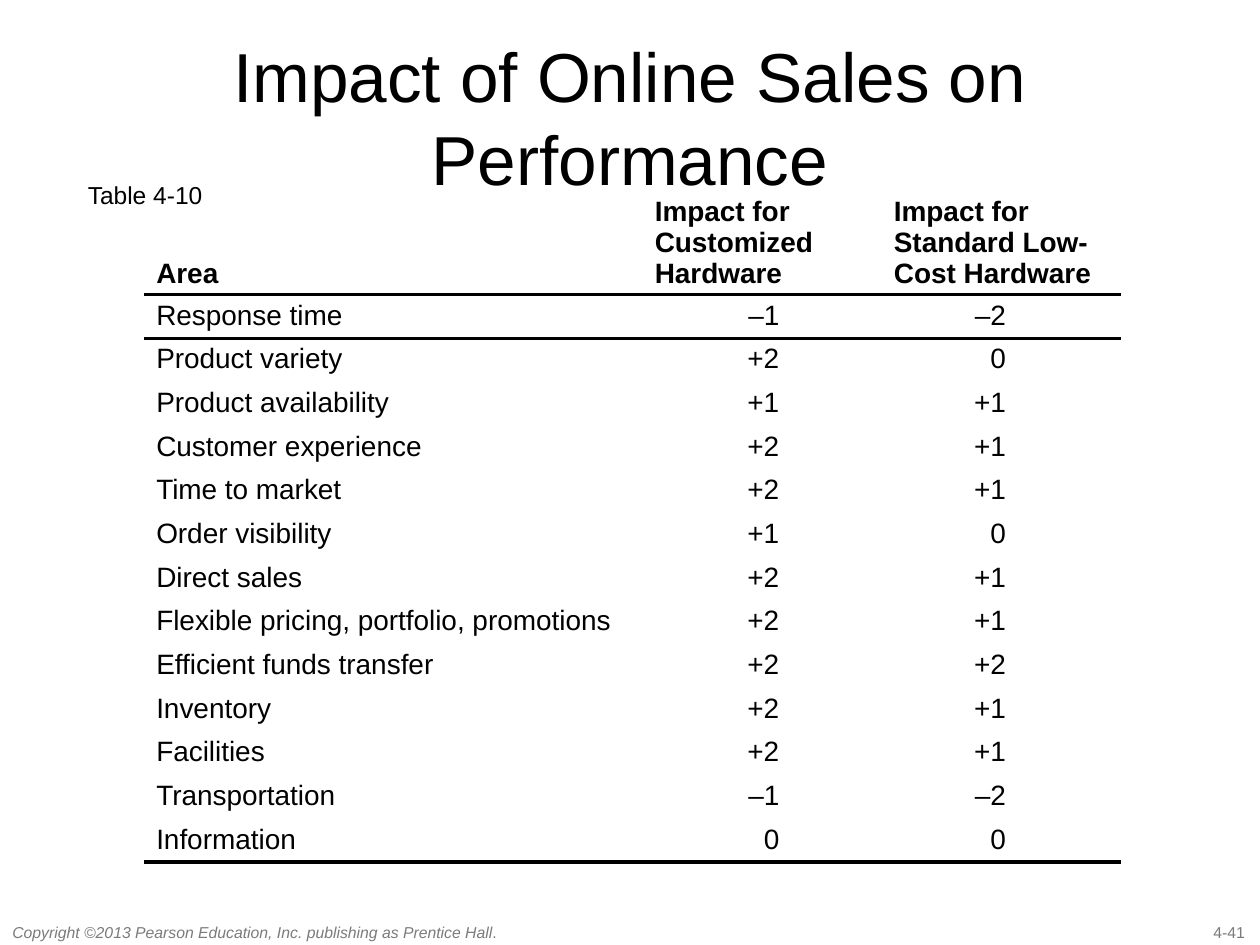
from typing import NamedTuple

from lxml.etree import SubElement
from pptx import Presentation
from pptx.dml.color import RGBColor
from pptx.enum.text import MSO_ANCHOR, MSO_AUTO_SIZE, PP_ALIGN
from pptx.oxml.ns import qn
from pptx.util import Cm, Pt

BLACK = RGBColor(0, 0, 0)
GRAY = RGBColor(0x7B, 0x7B, 0x7B)
WIDTHS = (10.05, 4.82, 4.82)
TABS = (None, 2.51, 2.26)
HEAD_H, ROW_H = 2.14, 0.88
RULED = (0, 1, 13)  # rows with a rule below


class Row(NamedTuple):
    area: str
    custom: str
    standard: str


class Label(NamedTuple):
    left: float
    top: float
    width: float
    height: float
    size: float
    color: RGBColor
    runs: tuple[tuple[str, bool], ...]  # text, italic


HEAD = Row("Area", "Impact for Customized Hardware",
           "Impact for Standard Low-Cost Hardware")
ROWS = (
    Row("Response time", "–1", "–2"),
    Row("Product variety", "+2", "0"),
    Row("Product availability", "+1", "+1"),
    Row("Customer experience", "+2", "+1"),
    Row("Time to market", "+2", "+1"),
    Row("Order visibility", "+1", "0"),
    Row("Direct sales", "+2", "+1"),
    Row("Flexible pricing, portfolio, promotions", "+2", "+1"),
    Row("Efficient funds transfer", "+2", "+2"),
    Row("Inventory", "+2", "+1"),
    Row("Facilities", "+2", "+1"),
    Row("Transportation", "–1", "–2"),
    Row("Information", "0", "0"),
)
LABELS = (
    Label(24.21, 18.47, 1.19, 0.63, 9, GRAY, (("4-41", False),)),
    Label(0, 18.47, 10.4, 0.63, 9, GRAY, (
        ("Copyright ©2013 Pearson Education, Inc. publishing as Prentice Hall", True),
        (".", False))),
    Label(1.52, 3.51, 2.84, 0.86, 14, BLACK, (("Table 4-10", False),)),
)


def style(font, color: RGBColor, **extra) -> None:
    for key, value in {"name": "Arial", **extra}.items():
        setattr(font, key, value)
    font.color.rgb = color


def add_title(slide) -> None:
    title = slide.shapes.title
    place = {"left": Cm(1.27), "top": Cm(0.76), "width": Cm(22.86), "height": Cm(3.18)}
    for key, value in place.items():
        setattr(title, key, value)
    frame = title.text_frame
    frame.text = "Impact of Online Sales on Performance"
    frame.vertical_anchor = MSO_ANCHOR.MIDDLE
    frame.auto_size = MSO_AUTO_SIZE.NONE
    para = frame.paragraphs[0]
    para.alignment = PP_ALIGN.CENTER
    style(para.runs[0].font, BLACK, size=Pt(39.6))


def add_label(slide, label: Label) -> None:
    box = slide.shapes.add_textbox(*(Cm(x) for x in label[:4]))
    frame = box.text_frame
    frame.word_wrap = False
    frame.auto_size = MSO_AUTO_SIZE.SHAPE_TO_FIT_TEXT
    for text, slant in label.runs:
        run = frame.paragraphs[0].add_run()
        run.text = text
        style(run.font, label.color, size=Pt(label.size), italic=slant)


def set_rules(cell, above: bool, below: bool) -> None:
    props = cell._tc.get_or_add_tcPr()
    for side, shown in (("L", False), ("R", False), ("T", above), ("B", below)):
        line = SubElement(props, qn(f"a:ln{side}"), w=str(Pt(2.25)))
        if shown:
            fill = SubElement(line, qn("a:solidFill"))
            SubElement(fill, qn("a:srgbClr"), val=str(BLACK))
        else:
            SubElement(line, qn("a:noFill"))


def fill_cell(cell, text: str, row: int, col: int) -> None:
    head = row == 0
    set_rules(cell, row - 1 in RULED, row in RULED)
    cell.fill.background()
    form = {"margin_left": Cm(0.25), "margin_right": Cm(0.25),
            "margin_top": Cm(0.11), "margin_bottom": Cm(0.11),
            "vertical_anchor": MSO_ANCHOR.BOTTOM if head else MSO_ANCHOR.TOP}
    for key, value in form.items():
        setattr(cell, key, value)
    para = cell.text_frame.paragraphs[0]
    tabbed = col > 0 and not head
    if tabbed:
        stops = SubElement(para._p.get_or_add_pPr(), qn("a:tabLst"))
        SubElement(stops, qn("a:tab"), pos=str(Cm(TABS[col])), algn="r")
    run = para.add_run()
    run.text = f"\t{text}" if tabbed else text
    style(run.font, BLACK, size=Pt(16), bold=head)


def add_grid(slide) -> None:
    rows = (HEAD, *ROWS)
    height = HEAD_H + ROW_H * len(ROWS)
    table = slide.shapes.add_table(len(rows), len(WIDTHS), Cm(2.9), Cm(3.8),
                                   Cm(sum(WIDTHS)), Cm(height)).table
    table.first_row = table.horz_banding = False
    for column, width in zip(table.columns, WIDTHS):
        column.width = Cm(width)
    for r, row in enumerate(rows):
        table.rows[r].height = Cm(ROW_H if r else HEAD_H)
        for c, text in enumerate(row):
            fill_cell(table.cell(r, c), text, r, c)


def main() -> None:
    deck = Presentation()
    deck.slide_width, deck.slide_height = Cm(25.4), Cm(19.05)
    slide = deck.slides.add_slide(deck.slide_layouts[5])
    add_title(slide)
    add_grid(slide)
    for label in LABELS:
        add_label(slide, label)
    deck.save("out.pptx")


if __name__ == "__main__":
    main()
